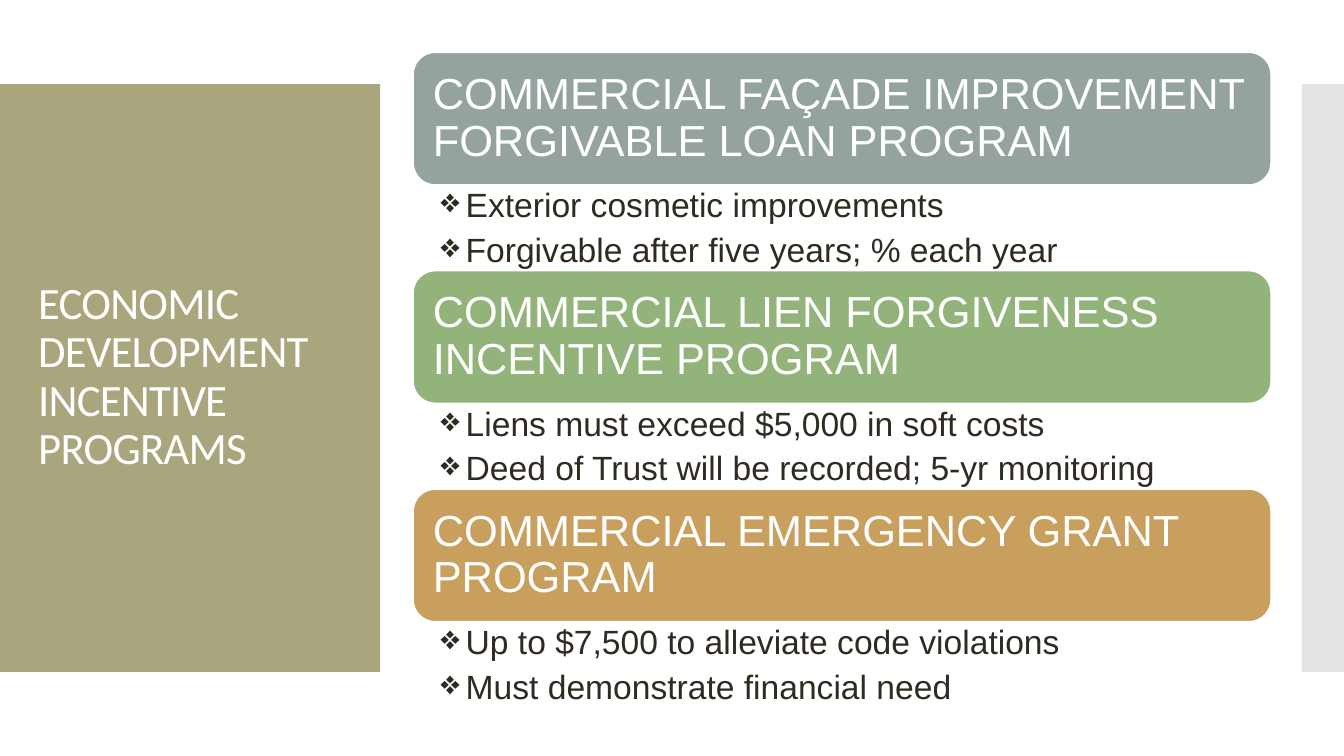
from lxml import etree
from pptx import Presentation, util as u
from pptx.dml import color
from pptx.enum import shapes, text
from pptx.oxml import ns

CELL = u.Inches(5 / 12)
COLS, ROWS = 32, 18


def rgb(value):
    return color.RGBColor.from_string(value)


class Deck:
    white, ink, olive, grey = "FFFFFF", "2F2B20", "A9A57C", "C8C8C8"
    title_font, body_font = "Calibri", "Arial"

    def __init__(self):
        self.prs = Presentation()
        self.prs.slide_width, self.prs.slide_height = COLS * CELL, ROWS * CELL
        self.slide = self.prs.slides.add_slide(self.prs.slide_layouts[5])

    def box(self, *cells):
        return [round(c * CELL) for c in cells]

    def shape(self, kind, cells, fill, alpha=None):
        sp = self.slide.shapes.add_shape(kind, *self.box(*cells))
        sp.shadow.inherit = False
        sp.fill.solid()
        sp.fill.fore_color.rgb = rgb(fill)
        sp.line.fill.background()
        if alpha:
            clr = sp._element.spPr.find(".//" + ns.qn("a:srgbClr"))
            etree.SubElement(clr, ns.qn("a:alpha"), val=str(alpha * 1000))
        return sp

    def frame(self, sp, insets, anchor):
        tf = sp.text_frame
        tf.word_wrap = True
        tf.auto_size = text.MSO_AUTO_SIZE.NONE
        tf.vertical_anchor = anchor
        tf.margin_left, tf.margin_top, tf.margin_right, tf.margin_bottom = map(u.Inches, insets)
        return tf

    def paragraph(self, p, words, font, size, fill):
        p.text = words
        p.alignment = text.PP_ALIGN.LEFT
        p.line_spacing = 0.9
        p.font.name, p.font.size = font, u.Pt(size)
        p.font.color.rgb = rgb(fill)

    def title(self, cells, words):
        sp = self.slide.shapes.title
        sp.left, sp.top, sp.width, sp.height = self.box(*cells)
        self.slide.shapes._spTree.append(sp._element)
        tf = self.frame(sp, (0.1, 0.05, 0.1, 0.05), text.MSO_ANCHOR.MIDDLE)
        p = tf.paragraphs[0]
        self.paragraph(p, words, self.title_font, 32, self.white)
        p._p.pPr.find(ns.qn("a:defRPr")).set("spc", "-60")

    def header(self, cells, words, fill):
        sp = self.shape(shapes.MSO_SHAPE.ROUNDED_RECTANGLE, cells, fill)
        sp.line.color.rgb = rgb(self.white)
        sp.line.width = u.Pt(0.85)
        tf = self.frame(sp, (0.13,) * 4, text.MSO_ANCHOR.MIDDLE)
        self.paragraph(tf.paragraphs[0], words, self.body_font, 31, self.white)

    def bullets(self, cells, items):
        sp = self.slide.shapes.add_textbox(*self.box(*cells))
        tf = self.frame(sp, (0.27, 0.04, 0.24, 0.04), text.MSO_ANCHOR.TOP)
        for i, item in enumerate(items):
            p = tf.add_paragraph() if i else tf.paragraphs[0]
            self.paragraph(p, item, self.body_font, 24, self.ink)
            p.space_after = u.Pt(6)
            ppr = p._p.get_or_add_pPr()
            ppr.set("marL", str(u.Inches(0.25)))
            ppr.set("indent", str(-u.Inches(0.25)))
            bullet = etree.Element(ns.qn("a:buChar"), char="❖")
            ppr.find(ns.qn("a:defRPr")).addprevious(bullet)


PROGRAMS = [
    ("COMMERCIAL FAÇADE IMPROVEMENT FORGIVABLE LOAN PROGRAM", "95A39D",
     ["Exterior cosmetic improvements", "Forgivable after five years; % each year"]),
    ("COMMERCIAL LIEN FORGIVENESS INCENTIVE PROGRAM", "92B47A",
     ["Liens must exceed $5,000 in soft costs",
      "Deed of Trust will be recorded; 5-yr monitoring"]),
    ("COMMERCIAL EMERGENCY GRANT PROGRAM", "C89F5D",
     ["Up to $7,500 to alleviate code violations", "Must demonstrate financial need"]),
]


def main():
    deck = Deck()
    rect = shapes.MSO_SHAPE.RECTANGLE
    deck.shape(rect, (0, 2, 9.05, 14), deck.olive)
    deck.shape(rect, (31, 2, 1, 14), deck.grey, alpha=50)
    deck.title((0.67, 2.95, 7.73, 12.07), "ECONOMIC DEVELOPMENT INCENTIVE PROGRAMS")

    left, width, first, pitch, head = 9.84, 20.42, 1.25, 5.2, 3.15
    for i, (name, fill, items) in enumerate(PROGRAMS):
        top = first + i * pitch
        deck.header((left, top, width, head), name, fill)
        deck.bullets((left, top + head, width, pitch - head), items)
    deck.prs.save("out.pptx")


if __name__ == "__main__":
    main()
